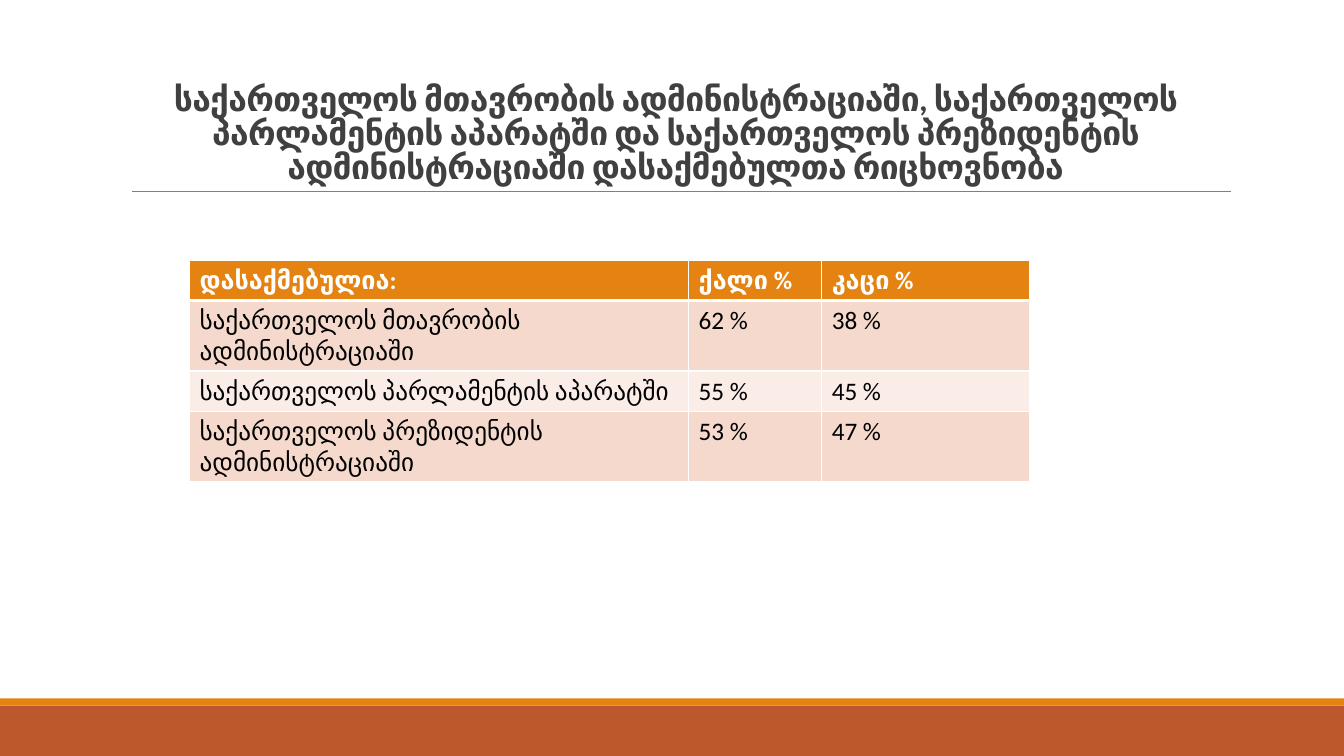
from dataclasses import dataclass

from lxml.etree import SubElement
from pptx import Presentation
from pptx.dml.color import RGBColor
from pptx.enum.shapes import MSO_CONNECTOR, MSO_SHAPE
from pptx.enum.text import MSO_ANCHOR, PP_ALIGN
from pptx.oxml.ns import qn
from pptx.slide import Slide
from pptx.table import _Cell
from pptx.text.text import _Paragraph
from pptx.util import Inches, Pt

FONT = "Calibri"
ORANGE = "E48312"
WHITE = "FFFFFF"
TITLE = (
    "საქართველოს მთავრობის ადმინისტრაციაში, საქართველოს პარლამენტის აპარატში "
    "და საქართველოს პრეზიდენტის ადმინისტრაციაში დასაქმებულთა რიცხოვნობა"
)
COLUMN_WIDTHS = (4.95, 1.32, 2.06)


@dataclass
class Band:
    top: float
    height: float
    fill: str


@dataclass
class StaffRow:
    texts: tuple[str, str, str]
    height: float
    fill: str
    is_header: bool = False


BANDS = [Band(7, 0.5, "BD582C"), Band(6.93, 0.07, ORANGE)]
STAFF_ROWS = [
    StaffRow(("დასაქმებულია:", "ქალი %", "კაცი %"), 0.36, ORANGE, True),
    StaffRow(("საქართველოს მთავრობის ადმინისტრაციაში", "62 %", "38 %"), 0.63, "F5D9CC"),
    StaffRow(("საქართველოს პარლამენტის აპარატში", "55 %", "45 %"), 0.36, "FAEDE7"),
    StaffRow(("საქართველოს პრეზიდენტის ადმინისტრაციაში", "53 %", "47 %"), 0.63, "F5D9CC"),
]


def color(value: str) -> RGBColor:
    return RGBColor.from_string(value)


def format_text(para: _Paragraph, size: float, ink: str, bold: bool) -> None:
    for span in para.runs:
        span.font.name = FONT
        span.font.size = Pt(size)
        span.font.bold = bold
        span.font.color.rgb = color(ink)


def add_band(page: Slide, band: Band, width: int) -> None:
    box = page.shapes.add_shape(
        MSO_SHAPE.RECTANGLE, 0, Inches(band.top), width, Inches(band.height)
    )
    box.shadow.inherit = False
    box.fill.solid()
    box.fill.fore_color.rgb = color(band.fill)
    box.line.fill.background()


def add_rule(page: Slide) -> None:
    rule = page.shapes.add_connector(
        MSO_CONNECTOR.STRAIGHT, Inches(1.31), Inches(1.9), Inches(12.21), Inches(1.9)
    )
    rule.line.color.rgb = color("808080")
    rule.line.width = Pt(0.5)
    SubElement(rule._element.spPr, qn("a:effectLst"))


def add_title(page: Slide) -> None:
    box = page.shapes.add_textbox(Inches(1.2), Inches(0.31), Inches(11), Inches(1.59))
    frame = box.text_frame
    frame.word_wrap = True
    frame.vertical_anchor = MSO_ANCHOR.BOTTOM
    frame.text = TITLE
    para = frame.paragraphs[0]
    para.alignment = PP_ALIGN.CENTER
    para.line_spacing = 0.85
    format_text(para, 24, "404040", True)
    for span in para.runs:
        span.font._element.set("spc", "-50")


def set_borders(cell: _Cell, top: float, bottom: float) -> None:
    properties = cell._tc.get_or_add_tcPr()
    for side, width in (("L", 1), ("R", 1), ("T", top), ("B", bottom)):
        line = SubElement(properties, qn(f"a:ln{side}"), w=str(Pt(width)))
        SubElement(SubElement(line, qn("a:solidFill")), qn("a:srgbClr"), val=WHITE)


def add_staff_table(page: Slide) -> None:
    table = page.shapes.add_table(
        len(STAFF_ROWS), len(COLUMN_WIDTHS),
        Inches(1.88), Inches(2.58), Inches(8.32), Inches(2.2),
    ).table
    for column, width in zip(table.columns, COLUMN_WIDTHS):
        column.width = Inches(width)
    for index, staff in enumerate(STAFF_ROWS):
        table.rows[index].height = Inches(staff.height)
        for cell, text in zip(table.rows[index].cells, staff.texts):
            # The thick line separates the header from the first body row
            set_borders(cell, 3 if index == 1 else 1, 3 if staff.is_header else 1)
            cell.fill.solid()
            cell.fill.fore_color.rgb = color(staff.fill)
            cell.text_frame.text = text
            ink = WHITE if staff.is_header else "000000"
            format_text(cell.text_frame.paragraphs[0], 18, ink, staff.is_header)


def main() -> None:
    deck = Presentation()
    deck.slide_width = Inches(13.33)
    deck.slide_height = Inches(7.5)
    page = deck.slides.add_slide(deck.slide_layouts[6])

    # Footer bands and title rule
    for band in BANDS:
        add_band(page, band, deck.slide_width)
    add_rule(page)

    # Content
    add_title(page)
    add_staff_table(page)
    deck.save("out.pptx")


if __name__ == "__main__":
    main()
